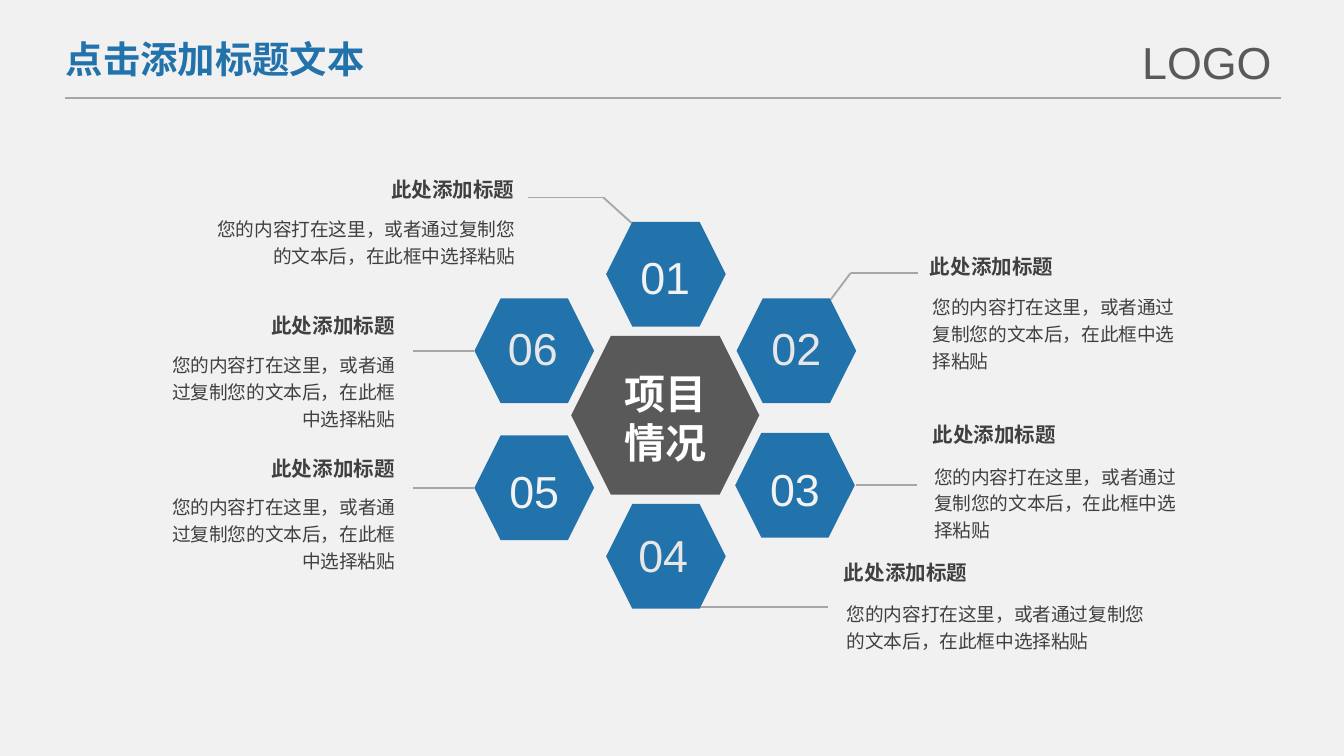
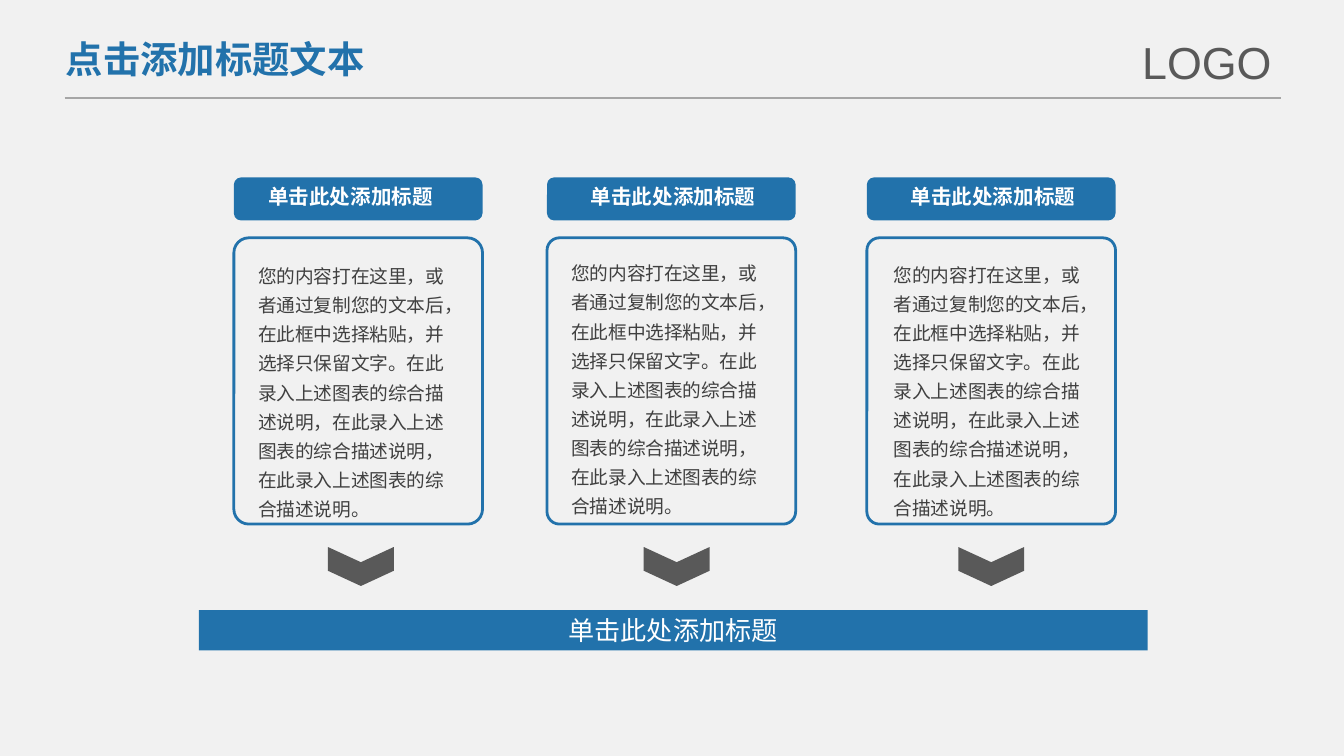
import dataclasses
import itertools

import lxml.etree
import pptx
import pptx.dml.color
import pptx.enum.shapes
import pptx.enum.text
import pptx.oxml.ns
import pptx.util

SHAPE = pptx.enum.shapes.MSO_SHAPE
ALIGN = pptx.enum.text.PP_ALIGN
FIT = pptx.enum.text.MSO_AUTO_SIZE.SHAPE_TO_FIT_TEXT
qn = pptx.oxml.ns.qn


@dataclasses.dataclass(frozen=True)
class Theme:
    background: str = "F1F1F1"
    accent: str = "2272AB"
    dark: str = "595959"
    text: str = "404040"
    rule: str = "A6A6A6"
    white: str = "FFFFFF"
    odd_number: str = "F2F2F2"
    even_number: str = "E7E7E7"
    cjk: str = "Noto Sans CJK SC"
    latin: str = "Arial"
    body: int = 10
    label: int = 11
    banner: int = 14
    title: int = 20
    core: int = 22
    number: int = 24


T = Theme()
WIDE, TIGHT = (10, 5), (7, 3)  # text insets: sides, top and bottom


def px(n):
    """100 px to the inch."""
    return pptx.util.Emu(n * 9144)


def rgb(value):
    return pptx.dml.color.RGBColor.from_string(value)


def write(tf, text, size=T.body, color=T.text, font=T.cjk, bold=False,
          align=ALIGN.LEFT, spacing=None, inset=TIGHT, wrap=True):
    tf.word_wrap = wrap
    tf.auto_size = FIT
    tf.margin_left = tf.margin_right = px(inset[0])
    tf.margin_top = tf.margin_bottom = px(inset[1])
    p = tf.paragraphs[0]
    p.alignment = align
    if spacing:
        p.line_spacing = spacing
    p._p.get_or_add_pPr().set("hangingPunct", "1")
    r = p.add_run()
    r.text = text
    r.font.size = pptx.util.Pt(size)
    r.font.bold = bold
    r.font.color.rgb = rgb(color)
    r.font.name = font
    lxml.etree.SubElement(r._r.get_or_add_rPr(), qn("a:ea"), typeface=font)


class Deck:
    def __init__(self, width):
        self.prs = pptx.Presentation()
        self.prs.slide_width = px(width)
        self.prs.slide_height = px(width) * 9 // 16
        self.s = None

    def slide(self, title):
        self.s = self.prs.slides.add_slide(self.prs.slide_layouts[6])
        fill = self.s.background.fill
        fill.solid()
        fill.fore_color.rgb = rgb(T.background)
        # Shared header
        self.line((48, 73), (953, 73))
        self.text((39, 22, 245, 44), title, size=T.title, color=T.accent,
                  bold=True, inset=WIDE, wrap=False)
        self.text((840, 21, 125, 50), "LOGO", size=T.number, color=T.dark,
                  font=T.latin, inset=WIDE, wrap=False)

    def text(self, box, text, **style):
        sp = self.s.shapes.add_textbox(*map(px, box))
        write(sp.text_frame, text, **style)

    def shape(self, kind, box, fill=None, outline=None, adj=None, rotation=0):
        sp = self.s.shapes.add_shape(kind, *map(px, box))
        sp.shadow.inherit = False
        sp.rotation = rotation
        if adj is not None:
            sp.adjustments[0] = adj
        if fill:
            sp.fill.solid()
            sp.fill.fore_color.rgb = rgb(fill)
        else:
            sp.fill.background()
        if outline:
            sp.line.color.rgb = rgb(outline)
            sp.line.width = pptx.util.Pt(1.5)
        else:
            sp.line.fill.background()
        return sp

    def line(self, *points):
        for a, b in itertools.pairwise(points):
            c = self.s.shapes.add_connector(
                pptx.enum.shapes.MSO_CONNECTOR.STRAIGHT, *map(px, a + b))
            c.line.color.rgb = rgb(T.rule)
            c.line.width = pptx.util.Pt(1)
            lxml.etree.SubElement(c._element.spPr, qn("a:effectLst"))


TITLE = "点击添加标题文本"
NOTE_TITLE = "此处添加标题"
NOTE = "您的内容打在这里，或者通过复制您的文本后，在此框中选择粘贴"
PANEL_TITLE = "单击此处添加标题"
PANEL = ("您的内容打在这里，或者通过复制您的文本后，在此框中选择粘贴，"
         "并选择只保留文字。在此录入上述图表的综合描述说明，"
         "在此录入上述图表的综合描述说明，在此录入上述图表的综合描述说明。")

# Hexagon corner, number box, leader points
HEXAGONS = [
    ((451, 165), (462, 173, 66, 54), [(470, 166), (449, 147), (393, 147)]),
    ((548, 222), (562, 234, 61, 50), [(618, 223), (633, 203), (683, 203)]),
    ((547, 322), (557, 331, 69, 54), [(682, 361), (637, 361)]),
    ((451, 375), (463, 388, 61, 50), [(521, 452), (616, 452)]),
    ((353, 324), (367, 332, 61, 54), [(353, 363), (307, 363)]),
    ((353, 222), (366, 234, 61, 50), [(353, 261), (307, 261)]),
]
# Note title corner, note box, alignment
NOTES = [
    ((284, 129), (146, 156, 244, 47), ALIGN.RIGHT),
    ((685, 186), (687, 214, 199, 67), ALIGN.LEFT),
    ((687, 311), (688, 340, 199, 67), ALIGN.LEFT),
    ((621, 414), (623, 442, 240, 47), ALIGN.LEFT),
    ((195, 336), (114, 363, 187, 67), ALIGN.RIGHT),
    ((195, 230), (114, 257, 187, 67), ALIGN.RIGHT),
]
# Panel left, corner ratio, title left, body box, chevron left
PANELS = [
    (174, 0.06, 178, (185, 189, 159, 203), 254),
    (407, 0.05, 418, (418, 187, 161, 203), 489),
    (645, 0.05, 656, (658, 188, 160, 203), 723),
]


def hexagon_slide(d):
    d.slide(TITLE)
    # Leaders lie under the hexagons
    for _, _, points in HEXAGONS:
        d.line(*points)
    # Numbered ring
    for n, (corner, number_box, _) in enumerate(HEXAGONS, 1):
        odd = n % 2
        d.shape(SHAPE.HEXAGON, (*corner, 89, 78), fill=T.accent)
        d.text(number_box, f"{n:02}", size=T.number, font=T.latin,
               color=T.odd_number if odd else T.even_number,
               align=ALIGN.CENTER, spacing=1.2 if odd else None, inset=WIDE)
    # Centre
    d.shape(SHAPE.HEXAGON, (425, 250, 140, 118), fill=T.dark)
    d.text((452, 269, 86, 85), "项目情况", size=T.core, color=T.white,
           bold=True, align=ALIGN.CENTER, inset=WIDE)
    # Notes
    for corner, box, align in NOTES:
        d.text((*corner, 106, 25), NOTE_TITLE, size=T.label, bold=True,
               align=ALIGN.RIGHT, wrap=False)
        d.text(box, NOTE, align=align, spacing=1.2)


def panel_slide(d):
    d.slide(TITLE)
    # Panels with title bars and chevrons
    for left, ratio, title_left, body_box, chevron_left in PANELS:
        d.shape(SHAPE.ROUNDED_RECTANGLE, (left, 177, 185, 213),
                outline=T.accent, adj=ratio)
        d.text(body_box, PANEL, spacing=1.3)
        d.shape(SHAPE.ROUNDED_RECTANGLE, (left, 132, 185, 32), fill=T.accent)
        d.text((title_left, 134, 166, 25), PANEL_TITLE, size=T.label,
               color=T.white, bold=True, align=ALIGN.CENTER)
        d.shape(SHAPE.CHEVRON, (chevron_left, 397, 29, 49), fill=T.dark,
                adj=0.39, rotation=90)
    # Closing banner
    banner = d.shape(SHAPE.RECTANGLE, (148, 454, 706, 30), fill=T.accent)
    write(banner.text_frame, PANEL_TITLE, size=T.banner, color=T.white,
          align=ALIGN.CENTER)


def main():
    d = Deck(1000)
    hexagon_slide(d)
    panel_slide(d)
    d.prs.save("out.pptx")


if __name__ == "__main__":
    main()
